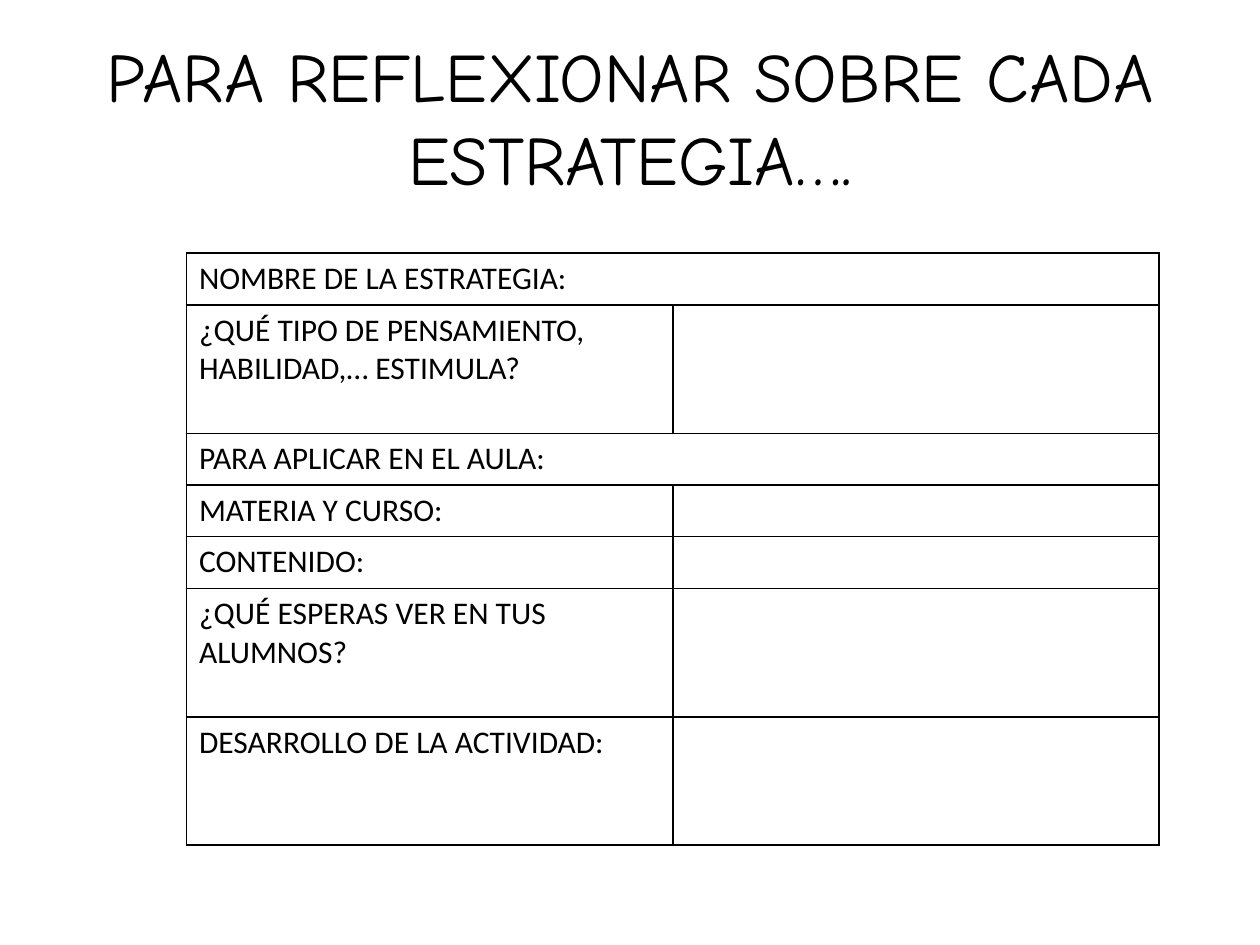
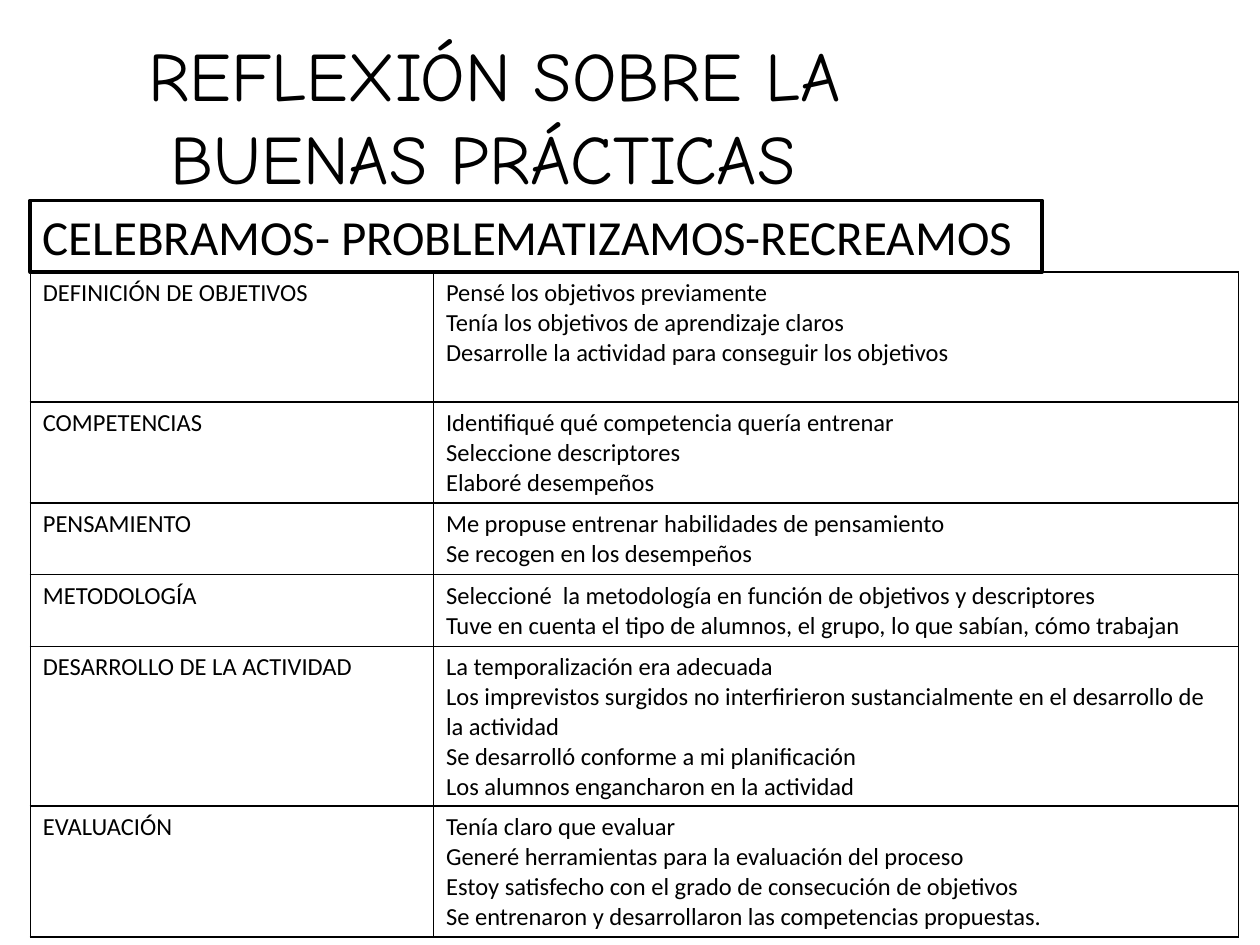
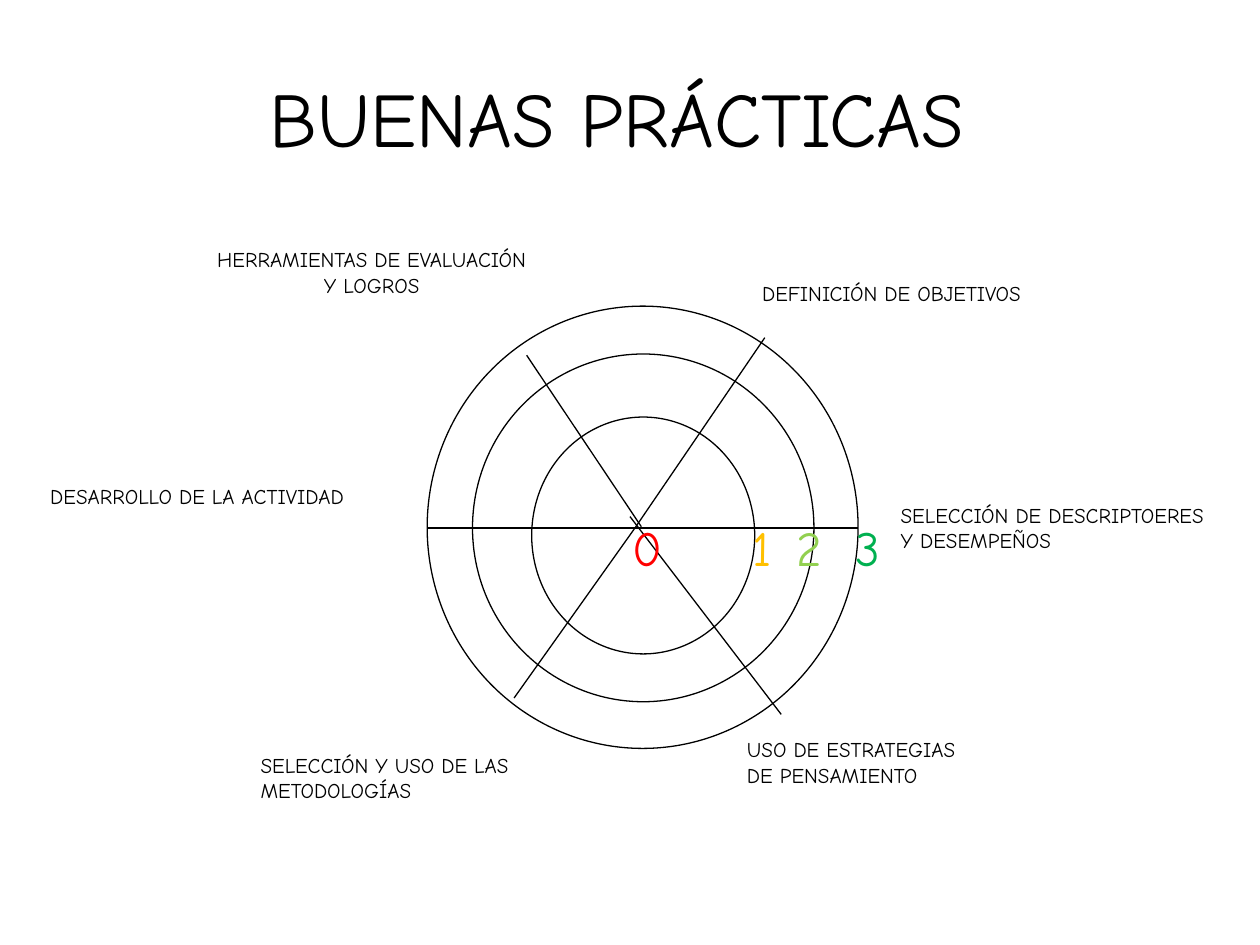
"""Build three slides on reflecting about good teaching practice."""
from lxml import etree
from pptx import Presentation, util as u
from pptx.dml.color import RGBColor
from pptx.enum import shapes, text
from pptx.oxml.ns import qn

PX = 9144
HEX = {"ink": "000000", "paper": "FFFFFF", "red": "FF0000",
       "amber": "FFC000", "lime": "92D050", "green": "00B050"}
HAND, BODY = "Comic Neue", "Calibri"
LEFT, MID = text.PP_ALIGN.LEFT, text.PP_ALIGN.CENTER

TITLES = [
    ("PARA REFLEXIONAR SOBRE CADA ESTRATEGIA….", (50, 30, 900, 125), 39.6),
    ("REFLEXIÓN SOBRE LA BUENAS PRÁCTICAS ", (0, 29, 785, 125), 39.6),
    ("BUENAS PRÁCTICAS ", (50, 30, 900, 125), 44),
]

PLAN = [
    (41, ["NOMBRE DE LA ESTRATEGIA:"]),
    (102, ["¿QUÉ TIPO DE PENSAMIENTO, HABILIDAD,… ESTIMULA?", ""]),
    (41, ["PARA APLICAR EN EL AULA:"]),
    (41, ["MATERIA Y CURSO:", ""]),
    (41, ["CONTENIDO:", ""]),
    (102, ["¿QUÉ ESPERAS VER EN TUS ALUMNOS?", ""]),
    (102, ["DESARROLLO DE LA ACTIVIDAD:", ""]),
]

BANNER = "CELEBRAMOS- PROBLEMATIZAMOS-RECREAMOS"
REVIEW = [
    (103, ["DEFINICIÓN DE OBJETIVOS",
           "Pensé los objetivos previamente\n"
           "Tenía los objetivos de aprendizaje claros\n"
           "Desarrolle la actividad para conseguir los objetivos"]),
    (80, ["COMPETENCIAS",
          "Identifiqué qué competencia quería entrenar\n"
          "Seleccione descriptores\n"
          "Elaboré desempeños"]),
    (57, ["PENSAMIENTO",
          "Me propuse entrenar habilidades de pensamiento\n"
          "Se recogen en los desempeños"]),
    (57, ["METODOLOGÍA",
          "Seleccioné  la metodología en función de objetivos y descriptores\n"
          "Tuve en cuenta el tipo de alumnos, el grupo, lo que sabían, cómo trabajan"]),
    (126, ["DESARROLLO DE LA ACTIVIDAD",
           "La temporalización era adecuada\n"
           "Los imprevistos surgidos no interfirieron sustancialmente en el desarrollo de la actividad\n"
           "Se desarrolló conforme a mi planificación\n"
           "Los alumnos engancharon en la actividad"]),
    (104, ["EVALUACIÓN",
           "Tenía claro que evaluar\n"
           "Generé herramientas para la evaluación del proceso\n"
           "Estoy satisfecho con el grado de consecución de objetivos\n"
           "Se entrenaron y desarrollaron las competencias propuestas."]),
]

RINGS = [(422, 331, 177, 188), (339, 243, 342, 351), (375, 281, 271, 276)]
SPOKES = [(339, 419, 681, 419), (607, 268, 504, 419), (504, 419, 408, 554),
          (418, 282, 509, 418), (500, 410, 620, 567)]
MARKS = [("0", 492, 43, "red"), ("1", 587, 35, "amber"),
         ("2", 622, 43, "lime"), ("3", 669, 43, "green")]
LABELS = [
    ("DEFINICIÓN DE OBJETIVOS", (595, 218, 289, 30), LEFT),
    ("SELECCIÓN DE DESCRIPTOERES Y DESEMPEÑOS", (705, 394, 268, 51), LEFT),
    ("HERRAMIENTAS DE EVALUACIÓN Y LOGROS", (159, 191, 272, 71), MID),
    ("DESARROLLO DE LA ACTIVIDAD", (30, 379, 295, 30), LEFT),
    ("SELECCIÓN Y USO DE LAS METODOLOGÍAS", (197, 592, 280, 51), LEFT),
    ("USO DE ESTRATEGIAS DE PENSAMIENTO", (583, 580, 189, 71), LEFT),
]


def emu(box):
    return [n * PX for n in box]


def tint(name):
    return RGBColor.from_string(HEX[name])


def write(frame, words, face, size, ink="ink", align=LEFT):
    frame.text = words
    for para in frame.paragraphs:
        para.alignment = align
        para.font.name = face
        para.font.size = u.Pt(size)
        para.font.color.rgb = tint(ink)


def label(slide, words, box, size, ink="ink", align=LEFT, wrap=True):
    frame = slide.shapes.add_textbox(*emu(box)).text_frame
    frame.word_wrap = wrap
    write(frame, words, HAND, size, ink, align)
    return frame


def outline(shape, width):
    shape.line.color.rgb = tint("ink")
    shape.line.width = u.Pt(width)


def draw(slide, kind, box, width):
    shape = slide.shapes.add_shape(kind, *emu(box))
    shape.shadow.inherit = False
    shape.fill.background()
    outline(shape, width)
    return shape


def edge(cell):
    props = cell._tc.get_or_add_tcPr()
    for side in ("lnL", "lnR", "lnT", "lnB"):
        line = etree.SubElement(props, qn("a:" + side), w=str(u.Pt(1)))
        fill = etree.SubElement(line, qn("a:solidFill"))
        etree.SubElement(fill, qn("a:srgbClr"), val=HEX["ink"])
    cell.fill.background()


def grid(slide, rows, left, top, cols, size):
    high = sum(row[0] for row in rows)
    table = slide.shapes.add_table(
        len(rows), len(cols), *emu((left, top, sum(cols), high))).table
    table.first_row = table.horz_banding = False
    for col, wide in zip(table.columns, cols):
        col.width = wide * PX
    for r, (tall, words) in enumerate(rows):
        table.rows[r].height = tall * PX
        for c in range(len(cols)):
            edge(table.cell(r, c))
        if len(words) < len(cols):
            table.cell(r, 0).merge(table.cell(r, len(cols) - 1))
        for c, part in enumerate(words):
            write(table.cell(r, c).text_frame, part, BODY, size)


def wheel(slide):
    for box in RINGS:
        draw(slide, shapes.MSO_SHAPE.OVAL, box, 0.75)
    for ends in SPOKES:
        spoke = slide.shapes.add_connector(
            shapes.MSO_CONNECTOR.STRAIGHT, *emu(ends))
        outline(spoke, 0.75)
        etree.SubElement(spoke._element.spPr, qn("a:effectLst"))
    for digit, left, wide, ink in MARKS:
        label(slide, digit, (left, 406, wide, 57), 28, ink, wrap=False)
    for words, box, align in LABELS:
        label(slide, words, box, 12, align=align)


def main():
    deck = Presentation()
    deck.slide_width, deck.slide_height = emu((1000, 750))
    pages = []
    for words, box, size in TITLES:
        page = deck.slides.add_slide(deck.slide_layouts[6])
        page.background.fill.solid()
        page.background.fill.fore_color.rgb = tint("paper")
        frame = label(page, words, box, size, align=MID)
        frame.vertical_anchor = text.MSO_ANCHOR.MIDDLE
        pages.append(page)
    plan, review, chart = pages

    grid(plan, PLAN, 148, 201, (386, 386), 18)

    banner = draw(review, shapes.MSO_SHAPE.RECTANGLE, (24, 159, 803, 57), 2)
    banner.fill.solid()
    banner.fill.fore_color.rgb = tint("paper")
    banner.text_frame.word_wrap = False
    write(banner.text_frame, BANNER, BODY, 28)
    grid(review, REVIEW, 24, 216, (320, 639), 14)

    wheel(chart)
    deck.save("out.pptx")


if __name__ == "__main__":
    main()
